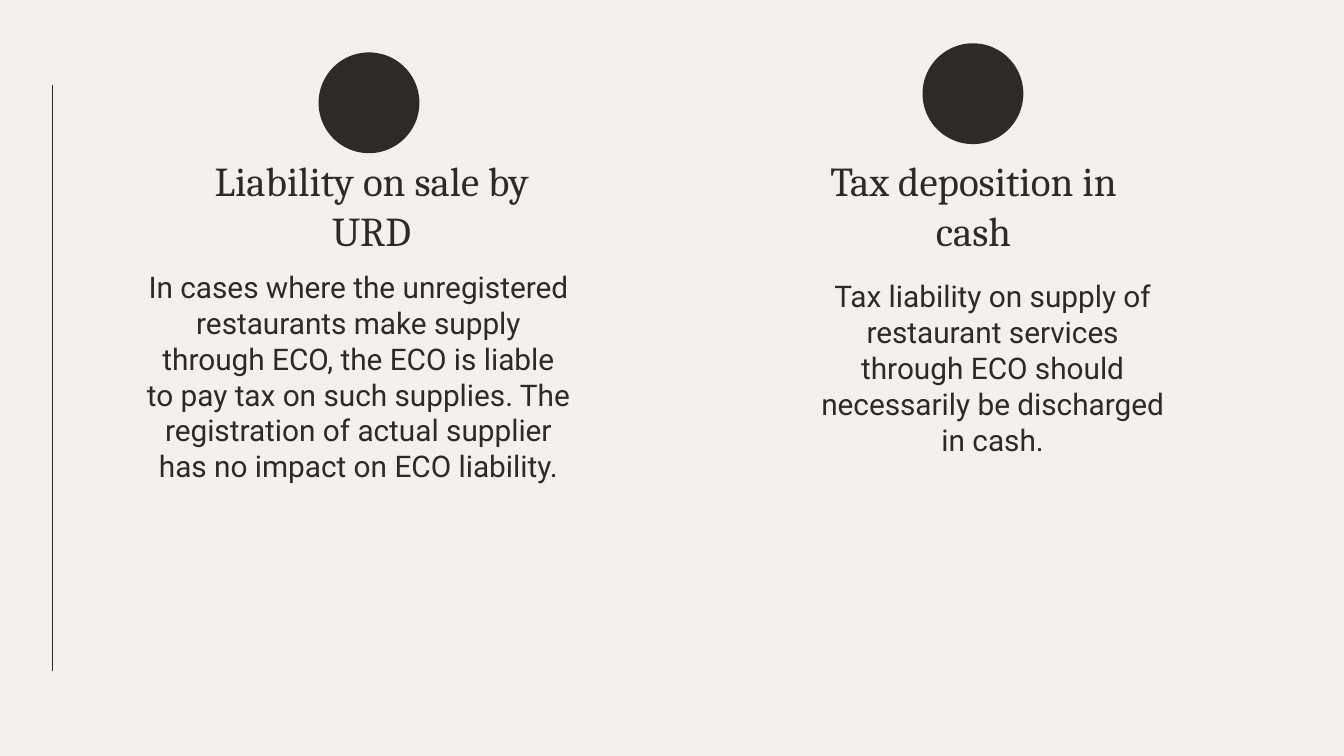
from lxml import etree
from pptx import Presentation
from pptx import util as u
from pptx.dml.color import RGBColor
from pptx.enum import shapes, text
from pptx.oxml.ns import qn

COLORS = {"paper": "F3F0EF", "ink": "2E2A28"}
HEADING = {"name": "Cambria", "size": u.Pt(29.3)}
BODY = {"name": "Roboto", "size": u.Pt(21.3)}
INSET = u.Inches(0.13)
DOT_SIZE = 1

# Boxes are left, top, width, height; dots are left, top
TOPICS = [
    {
        "dot": (3.16, 0.52),
        "heading": ("Liability on sale by URD", (1.98, 1.72, 3.41, 0.63)),
        "body": (
            "In cases where the unregistered restaurants make supply through ECO, "
            "the ECO is liable to pay tax on such supplies. The registration of "
            "actual supplier has no impact on ECO liability.",
            (1.32, 2.54, 4.47, 4.13),
        ),
    },
    {
        "dot": (9.15, 0.43),
        "heading": ("Tax deposition in cash", (7.95, 1.65, 3.41, 0.77)),
        "body": (
            "Tax liability on supply of restaurant services through ECO should "
            "necessarily be discharged in cash.",
            (7.95, 2.63, 3.79, 3.98),
        ),
    },
]


def color(name):
    return RGBColor.from_string(COLORS[name])


def inches(*lengths):
    return [u.Inches(length) for length in lengths]


def add_rule(page, start, end):
    rule = page.shapes.add_connector(
        shapes.MSO_CONNECTOR.STRAIGHT, *inches(*start, *end)
    )
    rule.line.color.rgb = color("ink")
    rule.line.width = u.Pt(0.75)
    etree.SubElement(rule._element.spPr, qn("a:effectLst"))


def add_dot(page, left, top):
    dot = page.shapes.add_shape(
        shapes.MSO_SHAPE.OVAL, *inches(left, top, DOT_SIZE, DOT_SIZE)
    )
    dot.shadow.inherit = False
    dot.fill.solid()
    dot.fill.fore_color.rgb = color("ink")
    dot.line.fill.background()


def add_text(page, words, place, font, anchor):
    frame = page.shapes.add_textbox(*inches(*place)).text_frame
    frame.word_wrap = True
    frame.vertical_anchor = anchor
    for side in ("left", "top", "right", "bottom"):
        setattr(frame, f"margin_{side}", INSET)
    para = frame.paragraphs[0]
    para.alignment = text.PP_ALIGN.CENTER
    span = para.add_run()
    span.text = words
    for key, value in font.items():
        setattr(span.font, key, value)
    span.font.color.rgb = color("ink")


def add_topic(page, topic):
    add_text(page, *topic["heading"], HEADING, text.MSO_ANCHOR.MIDDLE)
    add_text(page, *topic["body"], BODY, text.MSO_ANCHOR.TOP)
    add_dot(page, *topic["dot"])


def main():
    deck = Presentation()
    deck.slide_width, deck.slide_height = inches(13.33, 7.5)
    page = deck.slides.add_slide(deck.slide_layouts[6])
    page.background.fill.solid()
    page.background.fill.fore_color.rgb = color("paper")

    # Vertical rule at the left margin
    add_rule(page, (0.52, 0.84), (0.52, 6.66))

    # Two topics side by side
    for topic in TOPICS:
        add_topic(page, topic)

    deck.save("out.pptx")


if __name__ == "__main__":
    main()
